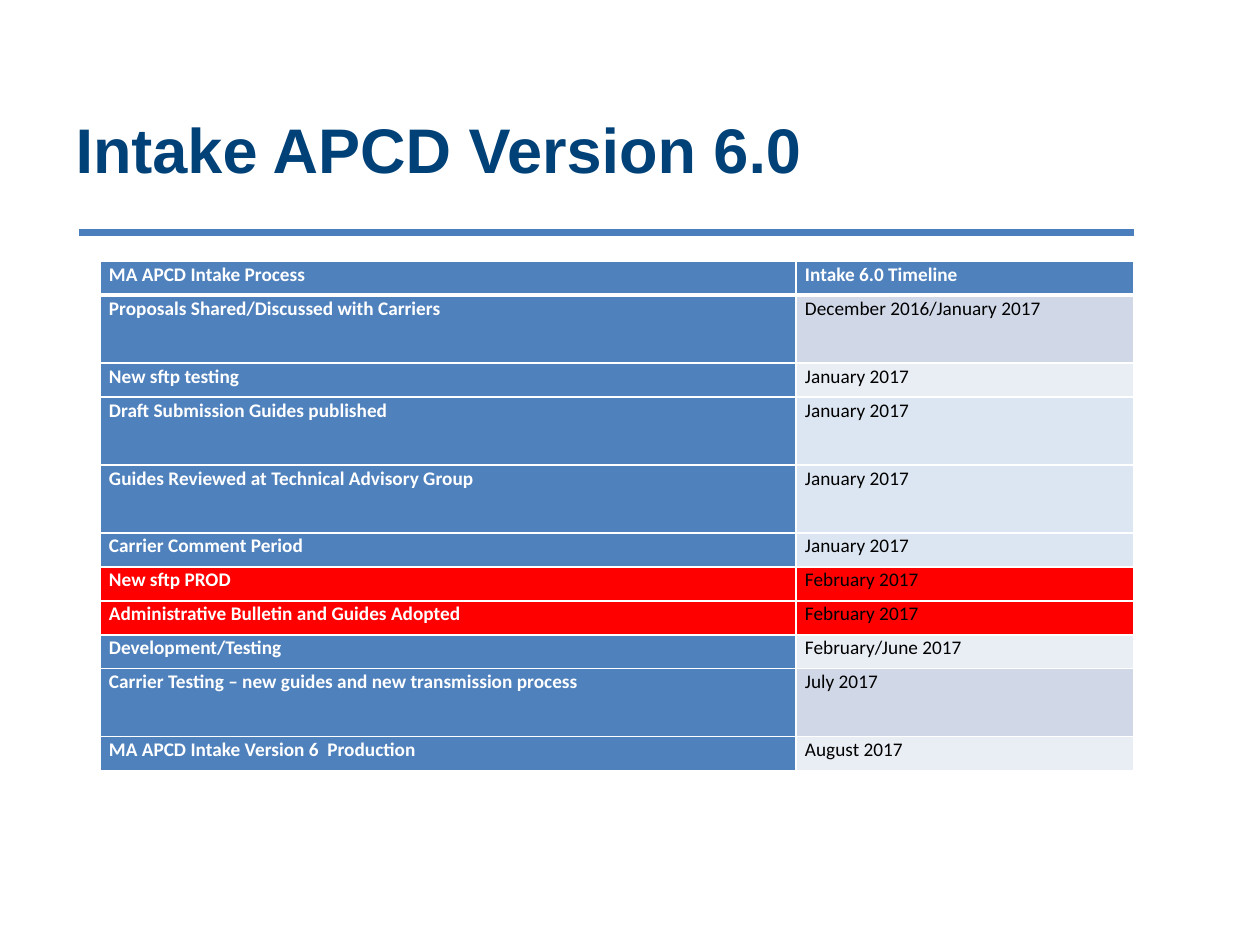
from dataclasses import dataclass

from lxml import etree
from pptx import Presentation
from pptx.dml.color import RGBColor
from pptx.enum import shapes, text
from pptx.oxml import ns
from pptx.util import Pt


@dataclass(frozen=True)
class Theme:
    title: str = "004178"
    rule: str = "4B7EBC"
    head: str = "4F81BD"
    dark: str = "D0D8E8"
    light: str = "E9EDF4"
    pale: str = "DCE6F2"
    alert: str = "FF0000"
    white: str = "FFFFFF"
    black: str = "000000"
    big: int = 36
    small: int = 11


look = Theme()
PX = 914400 / 126


def px(n):
    return round(n * PX)


def write(frame, words, size, color, font="Calibri", bold=False, space=None,
          anchor=text.MSO_ANCHOR.TOP):
    frame.text = words
    frame.word_wrap = True
    frame.vertical_anchor = anchor
    para = frame.paragraphs[0]
    para.alignment = text.PP_ALIGN.LEFT
    para.line_spacing = space
    face = para.runs[0].font
    face.name = font
    face.size = Pt(size)
    face.bold = bold
    face.color.rgb = RGBColor.from_string(color)


deck = Presentation()
deck.slide_width, deck.slide_height = px(1260), px(945)
slide = deck.slides.add_slide(deck.slide_layouts[5])

rule = slide.shapes.add_connector(
    shapes.MSO_CONNECTOR.STRAIGHT, px(79), px(233), px(1134), px(233))
rule.line.color.rgb = RGBColor.from_string(look.rule)
rule.line.width = Pt(4)
etree.SubElement(rule.element.spPr, ns.qn("a:effectLst"))

title = slide.shapes.title
title.left, title.top, title.width, title.height = px(63), px(78), px(1071), px(140)
write(title.text_frame, "Intake APCD Version 6.0", look.big, look.title,
      font="Arial", bold=True, anchor=text.MSO_ANCHOR.MIDDLE)

rows = [
    ("MA APCD Intake Process", "Intake 6.0 Timeline", look.head, 1),
    ("Proposals Shared/Discussed with Carriers", "December 2016/January 2017", look.dark, 2),
    ("New sftp testing", "January 2017", look.light, 1),
    ("Draft Submission Guides published", "January 2017", look.pale, 2),
    ("Guides Reviewed at Technical Advisory Group", "January 2017", look.pale, 2),
    ("Carrier Comment Period", "January 2017", look.pale, 1),
    ("New sftp PROD", "February 2017", look.alert, 1),
    ("Administrative Bulletin and Guides Adopted", "February 2017", look.alert, 1),
    ("Development/Testing", "February/June 2017", look.light, 1),
    ("Carrier Testing – new guides and new transmission process", "July 2017", look.dark, 2),
    ("MA APCD Intake Version 6  Production", "August 2017", look.light, 1),
]
unit = 34
total = unit * sum(row[3] for row in rows)
grid = slide.shapes.add_table(
    len(rows), 2, px(100), px(261), px(1034), px(total)).table
grid.columns[0].width, grid.columns[1].width = px(696), px(338)

for r, (step, date, tint, units) in enumerate(rows):
    grid.rows[r].height = px(unit * units)
    label = look.alert if tint == look.alert else look.head
    for c, (words, fill) in enumerate([(step, label), (date, tint)]):
        cell = grid.cell(r, c)
        strong = r == 0 or c == 0
        cell.margin_left = cell.margin_right = px(9)
        cell.margin_top = cell.margin_bottom = 0
        write(cell.text_frame, words, look.small,
              look.white if strong else look.black, bold=strong, space=1.07)
        props = cell._tc.get_or_add_tcPr()
        for side in "LRTB":
            thick = (r, side) in [(0, "B"), (1, "T")]
            edge = etree.SubElement(
                props, ns.qn(f"a:ln{side}"), w=str(Pt(3 if thick else 1)))
            paint = etree.SubElement(edge, ns.qn("a:solidFill"))
            etree.SubElement(paint, ns.qn("a:srgbClr"), val=look.white)
        cell.fill.solid()
        cell.fill.fore_color.rgb = RGBColor.from_string(fill)

deck.save("out.pptx")
